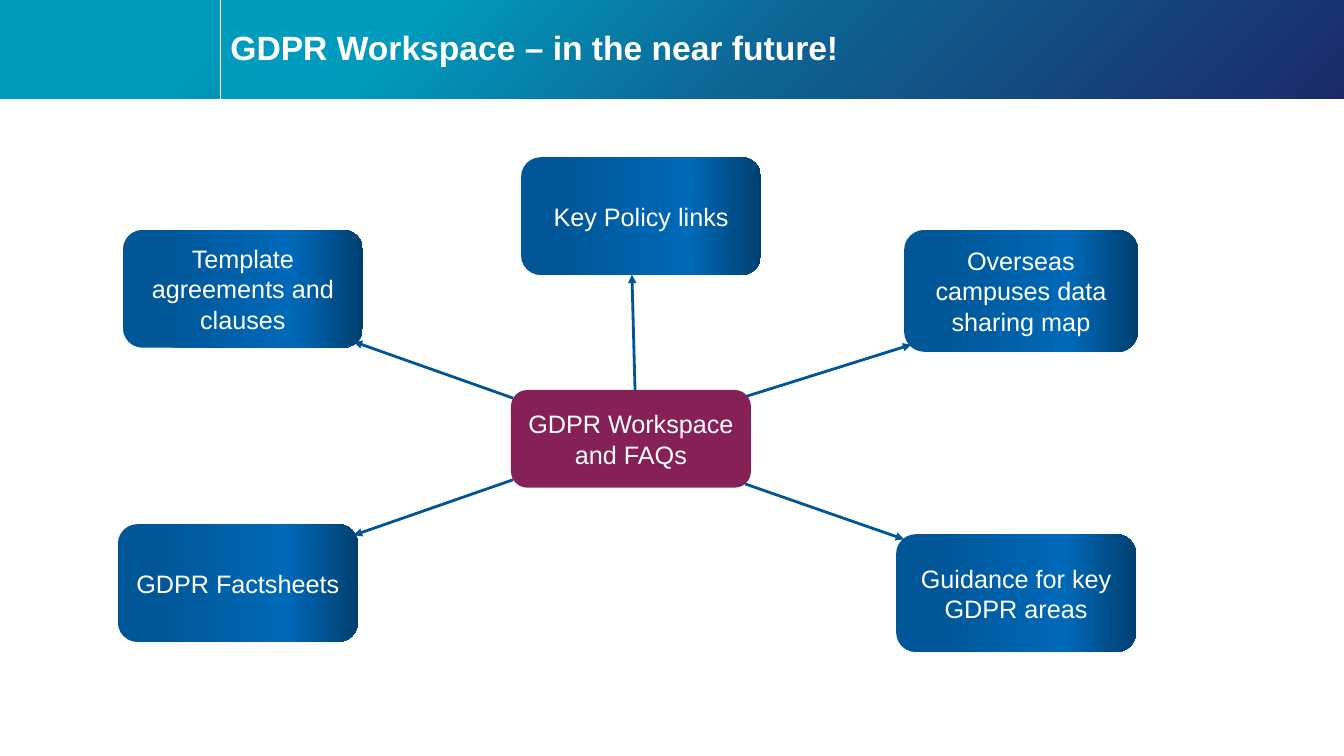
from lxml import etree
from pptx import Presentation
from pptx.dml.color import RGBColor
from pptx.enum.shapes import MSO_CONNECTOR, MSO_SHAPE
from pptx.enum.text import MSO_ANCHOR, MSO_AUTO_SIZE, PP_ALIGN
from pptx.oxml.ns import qn
from pptx.util import Pt

COLORS = {
    "white": "FFFFFF", "plum": "862158", "blue": "005697",
    "bright": "0069B8", "deep": "004071",
    "teal": "009BBD", "mid": "0E6394", "navy": "1B2A6B",
}
BANNER_STOPS = [(17, "teal"), (50, "mid"), (100, "navy")]
TOPIC_STOPS = [(17, "blue"), (70, "bright"), (100, "deep")]
SLIDE_W, SLIDE_H = 960, 540
BANNER_H, TITLE_X = 70.6, 157.4
BOX_W, BOX_H = 171.4, 84.2

HUB = ("GDPR Workspace and FAQs", (365, 278.6, BOX_W, 69.8))
TOPICS = [
    ("Template agreements and clauses", (87.8, 164.2, BOX_W, BOX_H)),
    ("Overseas campuses data sharing map", (645.8, 164.2, 167, 87.1)),
    ("GDPR Factsheets", (84.2, 374.4, BOX_W, BOX_H)),
    ("Key Policy links", (372.2, 112.3, BOX_W, BOX_H)),
    ("Guidance for key GDPR areas", (640.1, 381.6, BOX_W, BOX_H)),
]
ARROWS = [
    (366.5, 284.4, 252.7, 244.1),
    (533.5, 283, 650.9, 246.2),
    (366.5, 342.7, 252.7, 382.3),
    (453.6, 278.6, 451.4, 196.2),
    (532.1, 345.6, 645.8, 385.2),
]


def rgb(name):
    return RGBColor.from_string(COLORS[name])


def set_gradient(sp, stops, angle):
    sp.fill.gradient()
    sp.fill.gradient_angle = angle
    gs_list = sp.fill._xPr.find(qn("a:gradFill")).find(qn("a:gsLst"))
    for gs in list(gs_list):
        gs_list.remove(gs)
    for pos, color in stops:
        gs = etree.SubElement(gs_list, qn("a:gs"), pos=str(pos * 1000))
        etree.SubElement(gs, qn("a:srgbClr"), val=COLORS[color])


def add_block(slide, kind, box):
    sp = slide.shapes.add_shape(kind, *map(Pt, box))
    sp.shadow.inherit = False
    sp.line.fill.background()
    return sp


def add_banner(slide, left):
    sp = add_block(slide, MSO_SHAPE.RECTANGLE, (left, 0, SLIDE_W - left, BANNER_H))
    set_gradient(sp, BANNER_STOPS, 315)


def style_text(tf, size, align):
    tf.word_wrap = True
    tf.vertical_anchor = MSO_ANCHOR.MIDDLE
    p = tf.paragraphs[0]
    p.alignment = align
    p.font.name = "Arial"
    p.font.size = Pt(size)
    p.font.color.rgb = rgb("white")
    return p


def add_node(slide, text, box):
    sp = add_block(slide, MSO_SHAPE.ROUNDED_RECTANGLE, box)
    sp.text_frame.text = text
    style_text(sp.text_frame, 18, PP_ALIGN.CENTER)
    return sp


def add_line(slide, ends, color, width):
    line = slide.shapes.add_connector(MSO_CONNECTOR.STRAIGHT, *map(Pt, ends))
    line.line.color.rgb = rgb(color)
    line.line.width = Pt(width)
    etree.SubElement(line._element.spPr, qn("a:effectLst"))
    return line


def add_arrow(slide, ends):
    line = add_line(slide, ends, "blue", 2)
    etree.SubElement(line.line._get_or_add_ln(), qn("a:tailEnd"), type="triangle")


def add_title(slide, text):
    title = slide.shapes.title
    title.left, title.top = Pt(TITLE_X), Pt(7.9)
    title.width, title.height = Pt(SLIDE_W - TITLE_X), Pt(54.7)
    tf = title.text_frame
    tf.text = text
    tf.auto_size = MSO_AUTO_SIZE.NONE
    p = style_text(tf, 24, PP_ALIGN.LEFT)
    p.font.bold = True
    p.line_spacing = 0.9
    slide.shapes._spTree.append(title._element)


def main():
    prs = Presentation()
    prs.slide_width, prs.slide_height = Pt(SLIDE_W), Pt(SLIDE_H)
    slide = prs.slides.add_slide(prs.slide_layouts[5])

    add_banner(slide, 0)
    add_banner(slide, TITLE_X)
    add_line(slide, (TITLE_X, 0, TITLE_X, BANNER_H), "white", 0.5)
    add_title(slide, "GDPR Workspace – in the near future!")

    hub = add_node(slide, *HUB)
    hub.fill.solid()
    hub.fill.fore_color.rgb = rgb("plum")
    for ends in ARROWS:
        add_arrow(slide, ends)
    for text, box in TOPICS:
        set_gradient(add_node(slide, text, box), TOPIC_STOPS, 0)

    prs.save("out.pptx")


if __name__ == "__main__":
    main()
